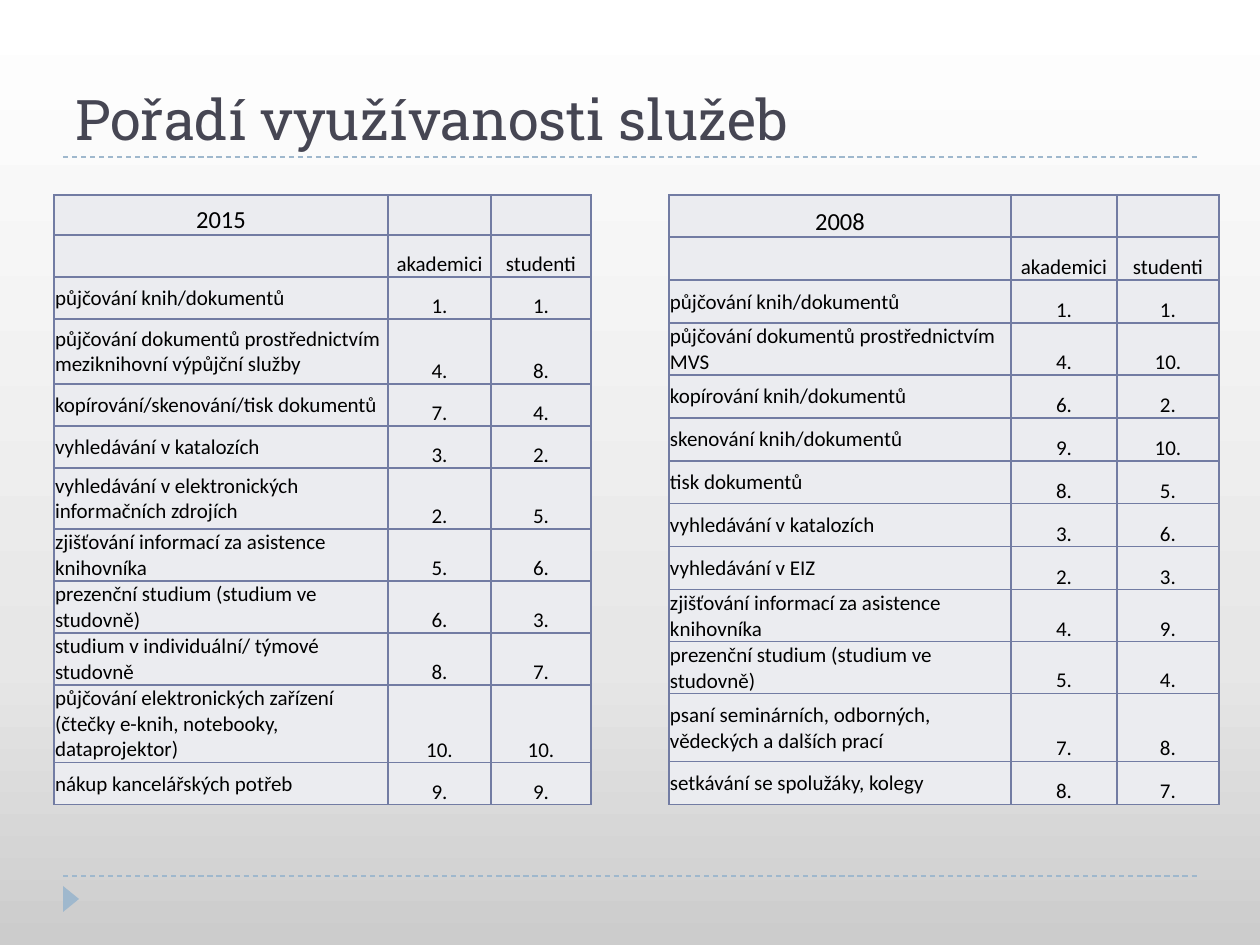
from copy import deepcopy

from lxml.etree import SubElement
from pptx import Presentation
from pptx.dml.color import RGBColor
from pptx.enum.dml import MSO_LINE
from pptx.enum.shapes import MSO_CONNECTOR, MSO_SHAPE
from pptx.enum.text import MSO_ANCHOR, PP_ALIGN
from pptx.oxml.ns import qn
from pptx.util import Emu, Pt

ACCENT = "9FB8CD"
BORDER = "727CA3"


def px(length):
    return Emu(round(length * 914400 / 126))


def color(hex_code):
    return RGBColor.from_string(hex_code)


prs = Presentation()
prs.slide_width, prs.slide_height = px(1260), px(945)
slide = prs.slides.add_slide(prs.slide_layouts[6])

# Background: grey at the bottom, white at the top
backdrop = slide.background.fill
backdrop.gradient()
backdrop.gradient_angle = 90
stop_list = slide.element.find(".//" + qn("a:gsLst"))
stop_list.append(deepcopy(stop_list[-1]))
shades = [(0, "CCCCCC"), (0.3, "E7E7E7"), (1, "FFFFFF")]
for stop, (position, shade) in zip(backdrop.gradient_stops, shades):
    stop.position = position
    stop.color.rgb = color(shade)

# Dashed rules under the title and above the footer
for y in (876, 157):
    rule = slide.shapes.add_connector(MSO_CONNECTOR.STRAIGHT, px(63), px(y), px(1197), px(y))
    rule.line.color.rgb = color(ACCENT)
    rule.line.width = Pt(0.75)
    rule.line.dash_style = MSO_LINE.DASH
    SubElement(rule.element.spPr, qn("a:effectLst"))

# Footer marker
marker = slide.shapes.add_shape(MSO_SHAPE.ISOSCELES_TRIANGLE, px(58), px(891), px(26), px(16))
marker.rotation = 90
marker.shadow.inherit = False
marker.fill.solid()
marker.fill.fore_color.rgb = color(ACCENT)
marker.line.fill.background()

# Title
title = slide.shapes.add_textbox(px(63), px(32), px(1134), px(126)).text_frame
title.word_wrap = True
title.vertical_anchor = MSO_ANCHOR.BOTTOM
title.text = "Pořadí využívanosti služeb"
title_font = title.paragraphs[0].runs[0].font
title_font.name = "Roboto Slab"
title_font.size = Pt(32)
title_font.color.rgb = color("464653")

# Rankings: service, rank by academics, rank by students, row height
ranking_2015 = [
    ("2015", "", "", 40),
    ("", "akademici", "studenti", 42),
    ("půjčování knih/dokumentů", "1.", "1.", 42),
    ("půjčování dokumentů prostřednictvím meziknihovní výpůjční služby", "4.", "8.", 65),
    ("kopírování/skenování/tisk dokumentů", "7.", "4.", 42),
    ("vyhledávání v katalozích", "3.", "2.", 42),
    ("vyhledávání v elektronických informačních zdrojích", "2.", "5.", 61),
    ("zjišťování informací za asistence knihovníka", "5.", "6.", 52),
    ("prezenční studium (studium ve studovně)", "6.", "3.", 52),
    ("studium v individuální/ týmové studovně", "8.", "7.", 52),
    ("půjčování elektronických zařízení (čtečky e-knih, notebooky, dataprojektor)",
     "10.", "10.", 78),
    ("nákup kancelářských potřeb", "9.", "9.", 42),
]
ranking_2008 = [
    ("2008", "", "", 42),
    ("", "akademici", "studenti", 43),
    ("půjčování knih/dokumentů", "1.", "1.", 43),
    ("půjčování dokumentů prostřednictvím MVS", "4.", "10.", 52),
    ("kopírování knih/dokumentů", "6.", "2.", 43),
    ("skenování knih/dokumentů", "9.", "10.", 43),
    ("tisk dokumentů", "8.", "5.", 43),
    ("vyhledávání v katalozích", "3.", "6.", 43),
    ("vyhledávání v EIZ", "2.", "3.", 43),
    ("zjišťování informací za asistence knihovníka", "4.", "9.", 52),
    ("prezenční studium (studium ve studovně)", "5.", "4.", 52),
    ("psaní seminárních, odborných, vědeckých a dalších prací", "7.", "8.", 68),
    ("setkávání se spolužáky, kolegy", "8.", "7.", 43),
]

for left, widths, ranking in (
    (54, (334, 103, 100), ranking_2015),
    (669, (342, 106, 102), ranking_2008),
):
    height = sum(row[-1] for row in ranking)
    table = slide.shapes.add_table(
        len(ranking), 3, px(left), px(195), px(sum(widths)), px(height)).table
    table.first_row = table.horz_banding = False
    for column, width in zip(table.columns, widths):
        column.width = px(width)

    for r, (*entries, row_height) in enumerate(ranking):
        table.rows[r].height = px(row_height)
        for c, entry in enumerate(entries):
            cell = table.cell(r, c)
            is_service = c == 0 and r > 1
            cell.margin_left = cell.margin_right = cell.margin_top = px(1)
            cell.margin_bottom = 0
            cell.vertical_anchor = MSO_ANCHOR.MIDDLE if is_service else MSO_ANCHOR.BOTTOM

            # Borders come before the fill in the cell properties
            for side in ("a:lnL", "a:lnR", "a:lnT", "a:lnB"):
                edge = SubElement(cell._tc.get_or_add_tcPr(), qn(side), w=str(Pt(1)))
                SubElement(SubElement(edge, qn("a:solidFill")), qn("a:srgbClr"), val=BORDER)
            cell.fill.solid()
            cell.fill.fore_color.rgb = color("EBECF0")

            cell.text_frame.text = entry
            paragraph = cell.text_frame.paragraphs[0]
            paragraph.alignment = PP_ALIGN.LEFT if is_service else PP_ALIGN.CENTER
            for run in paragraph.runs:
                run.font.name = "Calibri"
                run.font.size = Pt(14 if r == 0 else 12)
                run.font.color.rgb = color("000000")

prs.save("out.pptx")
